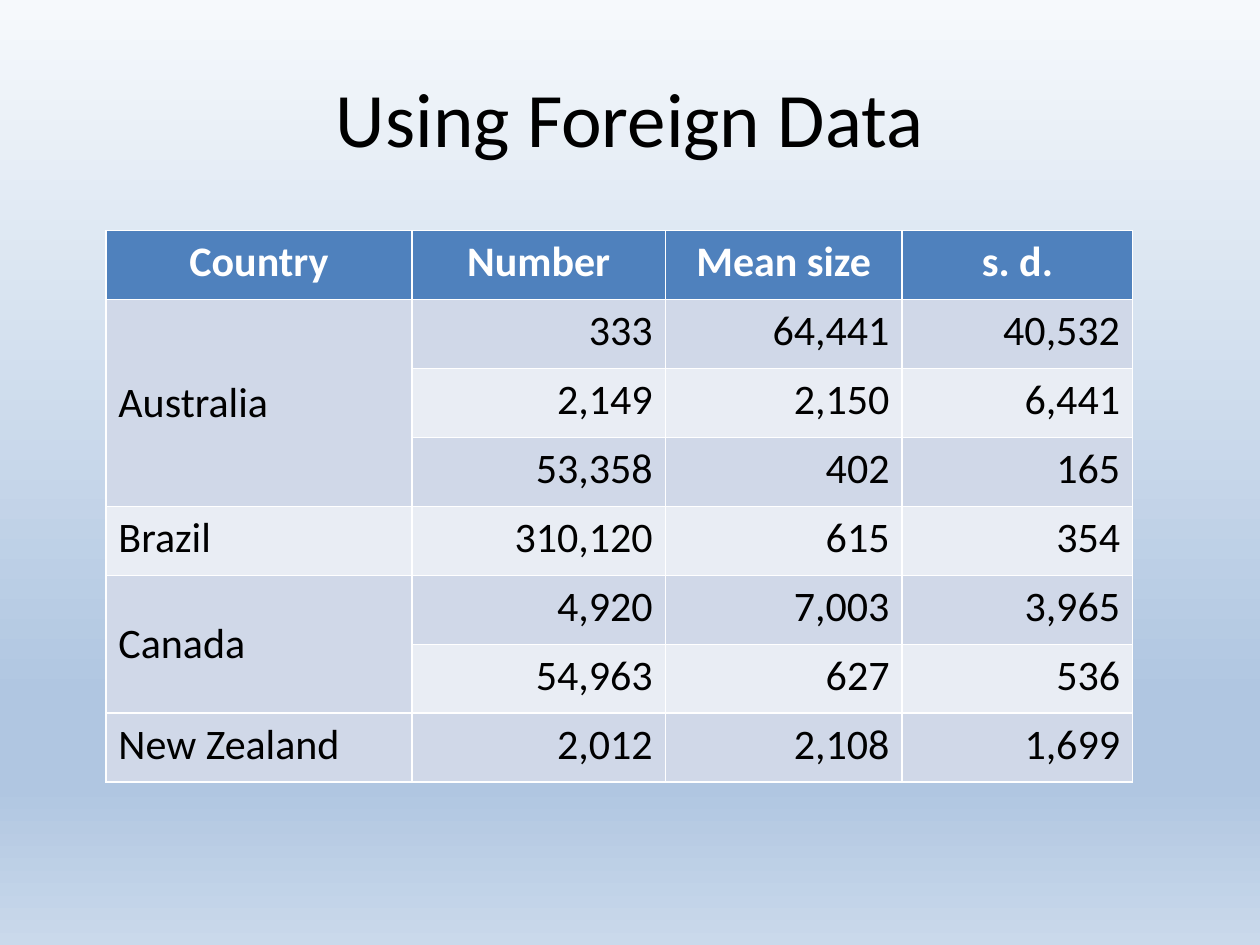
"""Build a slide that tabulates foreign data sets by country."""
from copy import deepcopy

from pptx import Presentation
from pptx.dml.color import RGBColor
from pptx.enum.text import MSO_ANCHOR as Anchor, PP_ALIGN as Align
from pptx.util import Inches, Pt

TITLE = "Using Foreign Data"
HEADINGS = ["Country", "Number", "Mean size", "s. d."]
COUNTRIES = {
    "Australia": [
        ("333", "64,441", "40,532"),
        ("2,149", "2,150", "6,441"),
        ("53,358", "402", "165"),
    ],
    "Brazil": [("310,120", "615", "354")],
    "Canada": [("4,920", "7,003", "3,965"), ("54,963", "627", "536")],
    "New Zealand": [("2,012", "2,108", "1,699")],
}
COLORS = {
    "header": "4F81BD",
    "odd": "D0D8E8",
    "even": "E9EDF4",
    "light": "FFFFFF",
    "dark": "000000",
}
SKY = [(0, "F6F9FC"), (0.74, "B0C6E1"), (0.83, "B0C6E1"), (1, "CAD9EB")]
FONT = "Calibri"
COLUMN_WIDTHS = [2.43, 2.01, 1.88, 1.83]
ROW_HEIGHT = 4.38 / 8
TABLE_LEFT, TABLE_TOP = 0.84, 1.83


def style_text(frame, align, size, color, bold=False):
    paragraph = frame.paragraphs[0]
    paragraph.alignment = align
    for run in paragraph.runs:
        run.font.name = FONT
        run.font.size = Pt(size)
        run.font.bold = bold
        run.font.color.rgb = RGBColor.from_string(COLORS[color])


def paint_background(slide):
    fill = slide.background.fill
    fill.gradient()
    fill.gradient_angle = 270
    stop_list = slide.element.xpath(".//a:gsLst")[0]
    for _ in range(len(SKY) - len(stop_list)):
        stop_list.append(deepcopy(stop_list[0]))
    for stop, (position, color) in zip(fill.gradient_stops, SKY):
        stop.position = position
        stop.color.rgb = RGBColor.from_string(color)


def fill_cell(cell, text, fill, align, color="dark", bold=False):
    cell.fill.solid()
    cell.fill.fore_color.rgb = RGBColor.from_string(COLORS[fill])
    cell.text_frame.text = text
    style_text(cell.text_frame, align, 24, color, bold)


def add_data_table(slide):
    row_count = 1 + sum(len(records) for records in COUNTRIES.values())
    table = slide.shapes.add_table(
        row_count, len(HEADINGS), Inches(TABLE_LEFT), Inches(TABLE_TOP),
        Inches(sum(COLUMN_WIDTHS)), Inches(ROW_HEIGHT * row_count),
    ).table
    for column, width in zip(table.columns, COLUMN_WIDTHS):
        column.width = Inches(width)
    for column, heading in enumerate(HEADINGS):
        fill_cell(table.cell(0, column), heading, "header", Align.CENTER, "light", True)

    row = 1
    for country, records in COUNTRIES.items():
        country_cell = table.cell(row, 0)
        fill_cell(country_cell, country, "odd" if row % 2 else "even", Align.LEFT)
        if len(records) > 1:
            country_cell.merge(table.cell(row + len(records) - 1, 0))
            country_cell.vertical_anchor = Anchor.MIDDLE
        for record in records:
            band = "odd" if row % 2 else "even"
            for column, value in enumerate(record, start=1):
                fill_cell(table.cell(row, column), value, band, Align.RIGHT)
            row += 1


def main():
    deck = Presentation()
    deck.slide_width, deck.slide_height = Inches(10), Inches(7.5)
    slide = deck.slides.add_slide(deck.slide_layouts[5])
    paint_background(slide)

    title = slide.shapes.title
    title.left, title.top = Inches(0.5), Inches(0.3)
    title.width, title.height = Inches(9), Inches(1.25)
    title.text_frame.text = TITLE
    title.text_frame.vertical_anchor = Anchor.MIDDLE
    style_text(title.text_frame, Align.CENTER, 44, "dark")

    add_data_table(slide)
    deck.save("out.pptx")


if __name__ == "__main__":
    main()
